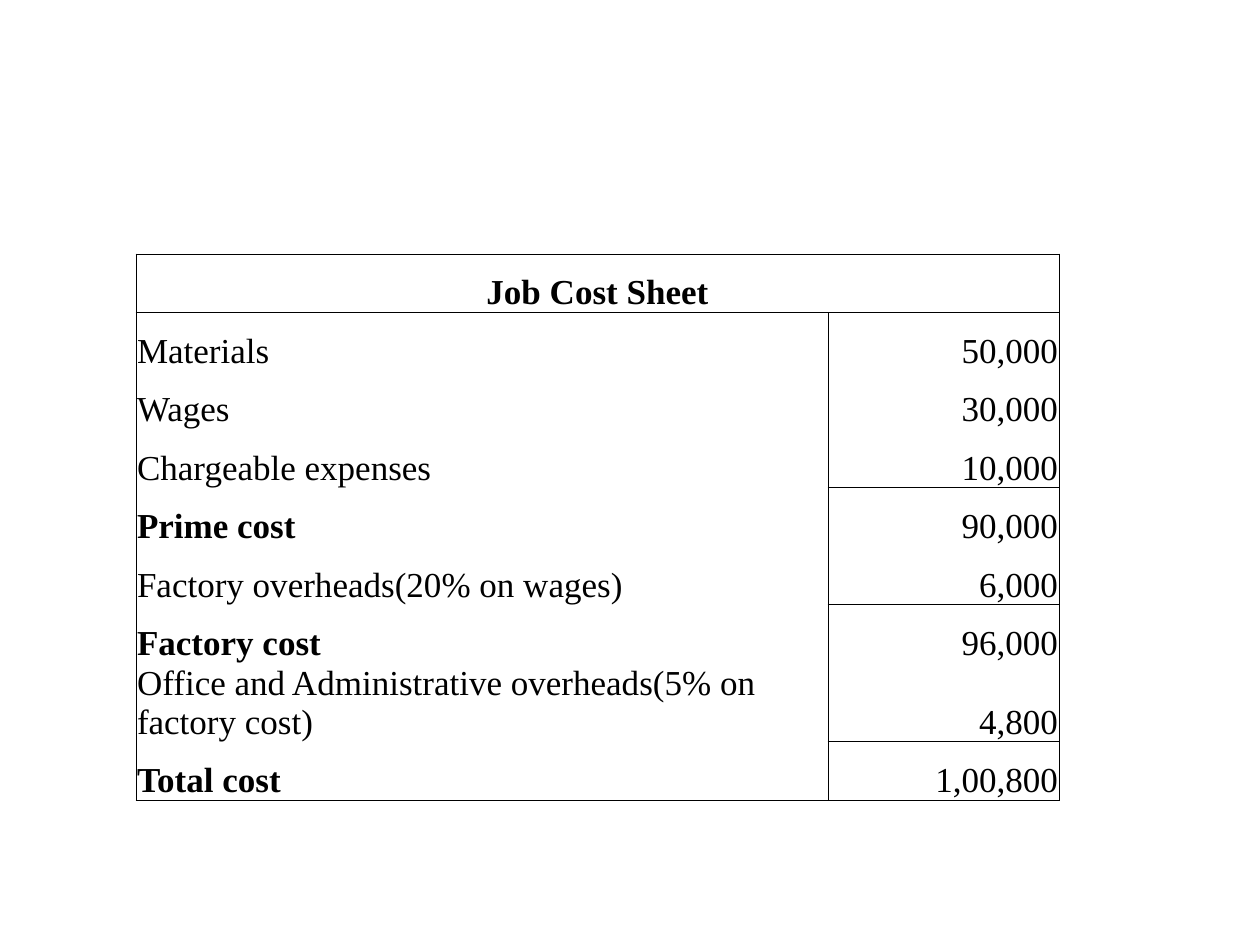
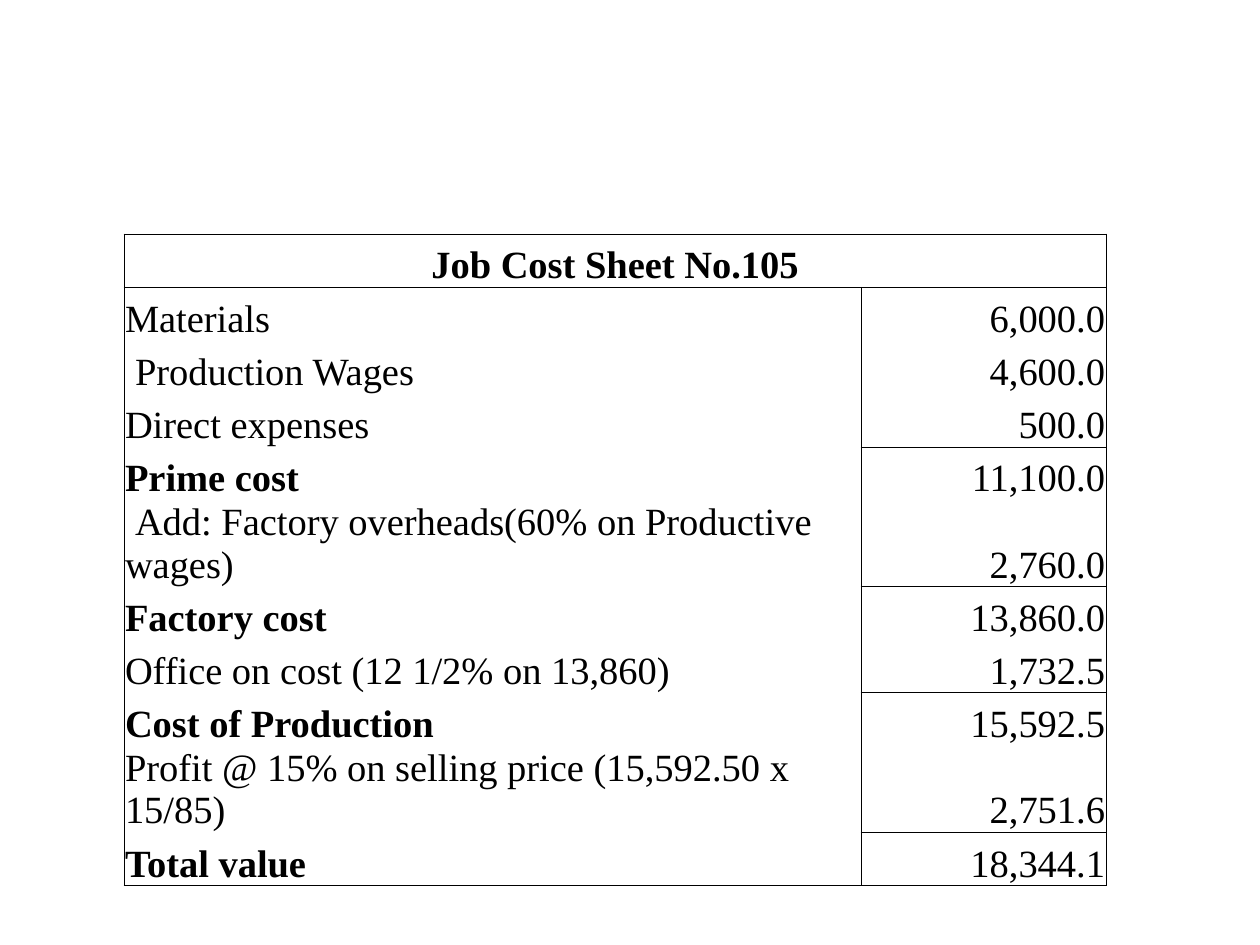
from lxml import etree
from pptx import Presentation
from pptx.dml.color import RGBColor
from pptx.enum.text import MSO_ANCHOR as ANCHOR, PP_ALIGN as ALIGN
from pptx.oxml.ns import qn
from pptx.util import Pt

PX = 914400 / 126  # EMU per pixel
FONT, INK = "Times New Roman", "000000"
NO_STYLE = "{2D5ABB26-0587-4C30-8999-92F81FD0307C}"


def write(cell, text, size, bold=False, align=ALIGN.LEFT, indent=0):
    """Put one formatted paragraph at the bottom of a cell."""
    cell.margin_left = cell.margin_right = cell.margin_top = round(PX)
    cell.margin_bottom = 0
    cell.vertical_anchor = ANCHOR.BOTTOM
    p = cell.text_frame.paragraphs[0]
    p.alignment = align
    if indent:
        p._p.get_or_add_pPr().set("indent", str(round(indent * PX)))
    r = p.add_run()
    r.text = text
    r.font.name, r.font.size, r.font.bold = FONT, Pt(size), bold
    r.font.color.rgb = RGBColor.from_string(INK)


def rule(cell, sides):
    """Draw thin lines on the given sides (L, R, T, B) and clear the rest."""
    tcPr = cell._tc.get_or_add_tcPr()
    for side in "LRTB":
        ln = etree.SubElement(tcPr, qn(f"a:ln{side}"), w=str(Pt(0.5)))
        if side in sides:
            fill = etree.SubElement(ln, qn("a:solidFill"))
            etree.SubElement(fill, qn("a:srgbClr"), val=INK)
        else:
            etree.SubElement(ln, qn("a:noFill"))
    cell.fill.background()


# Rows are label, amount, and first-line indent; totals are bold and ruled above
TOTALS = {"Prime cost", "Factory cost", "Cost of Production", "Total cost", "Total value"}
SHEETS = [
    dict(title="Job Cost Sheet", size=20, left=136, top=254, height=526, widths=(692, 231), rows=[
        ("Materials", "50,000", 0),
        ("Wages", "30,000", 0),
        ("Chargeable expenses", "10,000", 0),
        ("Prime cost", "90,000", 0),
        ("Factory overheads(20% on wages)", "6,000", 0),
        ("Factory cost", "96,000", 0),
        ("Office and Administrative overheads(5% on factory cost)", "4,800", 0),
        ("Total cost", "1,00,800", 0),
    ]),
    dict(title="Job Cost Sheet No.105", size=22, left=124, top=234, height=586, widths=(737, 245), rows=[
        ("Materials", "6,000.0", 0),
        ("Production Wages", "4,600.0", 10),
        ("Direct expenses", "500.0", 0),
        ("Prime cost", "11,100.0", 0),
        ("Add: Factory overheads(60% on Productive wages)", "2,760.0", 10),
        ("Factory cost", "13,860.0", 0),
        ("Office on cost (12 1/2% on 13,860)", "1,732.5", 0),
        ("Cost of Production", "15,592.5", 0),
        ("Profit @ 15% on selling price (15,592.50 x 15/85)", "2,751.6", 0),
        ("Total value", "18,344.1", 0),
    ]),
]

prs = Presentation()
prs.slide_width, prs.slide_height = round(1260 * PX), round(945 * PX)

for sheet in SHEETS:
    s = prs.slides.add_slide(prs.slide_layouts[6])
    rows, size, widths = sheet["rows"], sheet["size"], sheet["widths"]
    box = (sheet["left"], sheet["top"], sum(widths), sheet["height"])
    table = s.shapes.add_table(len(rows) + 1, 2, *(round(v * PX) for v in box)).table
    table.first_row = table.horz_banding = False
    table._tbl.tblPr.find(qn("a:tableStyleId")).text = NO_STYLE
    for col, width in zip(table.columns, widths):
        col.width = round(width * PX)

    # Title row across both columns
    head = table.cell(0, 0)
    head.merge(table.cell(0, 1))
    write(head, sheet["title"], size, bold=True, align=ALIGN.CENTER)
    rule(head, "LRTB")
    rule(table.cell(0, 1), "RTB")

    # Cost lines
    for i, (text, amount, indent) in enumerate(rows, 1):
        label, value = table.cell(i, 0), table.cell(i, 1)
        write(label, text, size, bold=text in TOTALS, indent=indent)
        write(value, amount, size, align=ALIGN.RIGHT)
        first, last = i == 1, i == len(rows)
        rule(label, "LR" + "T" * first + "B" * last)
        above = first or text in TOTALS
        below = last or rows[i][0] in TOTALS
        rule(value, "LR" + "T" * above + "B" * below)

prs.save("out.pptx")
